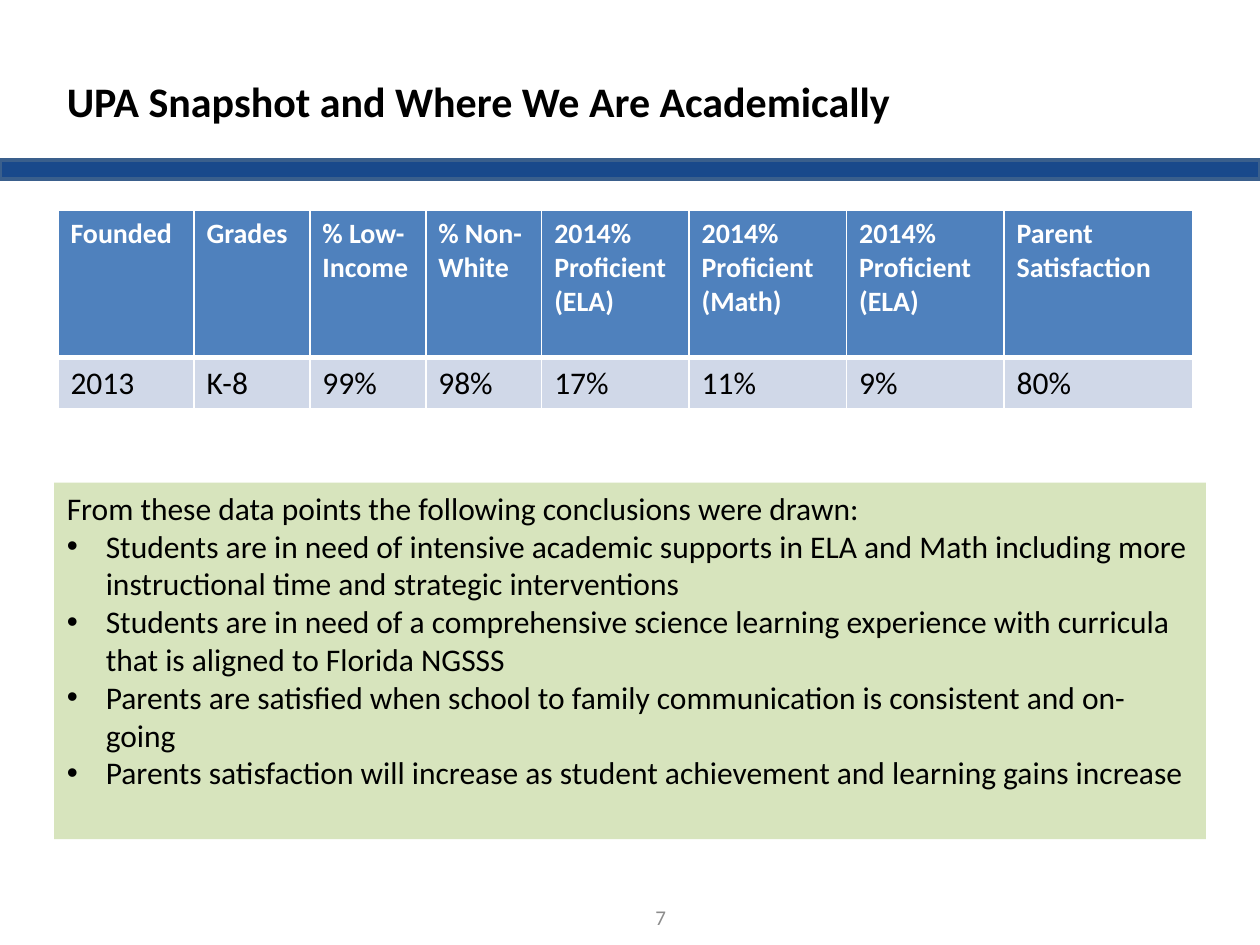
from lxml.etree import SubElement
from pptx import Presentation
from pptx.dml.color import RGBColor
from pptx.enum.shapes import MSO_SHAPE
from pptx.enum.text import MSO_ANCHOR, MSO_AUTO_SIZE, PP_ALIGN
from pptx.oxml.ns import qn
from pptx.util import Inches, Pt

HEADERS = ["Founded", "Grades", "% Low-Income", "% Non-White",
           "2014% Proficient\n(ELA)", "2014% Proficient\n(Math)",
           "2014% Proficient\n(ELA)", "Parent Satisfaction"]
VALUES = ["2013", "K-8", "99%", "98%", "17%", "11%", "9%", "80%"]
COLUMN_WIDTHS = [1.08, 0.92, 0.92, 0.92, 1.17, 1.25, 1.25, 1.5]
INTRODUCTION = "From these data points the following conclusions were drawn:"
CONCLUSIONS = [
    "Students are in need of intensive academic supports in ELA and Math including more "
    "instructional time and strategic interventions",
    "Students are in need of a comprehensive science learning experience with curricula "
    "that is aligned to Florida NGSSS",
    "Parents are satisfied when school to family communication is consistent and on-going",
    "Parents satisfaction will increase as student achievement and learning gains increase",
]
TITLE_FORMAT = {"size": Pt(24), "bold": True, "color": "000000"}
HEADER_FORMAT = {"size": Pt(16), "bold": True, "color": "FFFFFF"}
BODY_FORMAT = {"size": Pt(18), "bold": False, "color": "000000"}
NUMBER_FORMAT = {"size": Pt(12), "bold": False, "color": "8C8C8C"}


def rgb(value):
    """Turn a hex string into a colour."""
    return RGBColor.from_string(value)


def paint(target, color):
    """Give a shape or cell a solid fill."""
    target.fill.solid()
    target.fill.fore_color.rgb = rgb(color)


def format_text(text_frame, text_format, alignment=PP_ALIGN.LEFT):
    """Apply one font format and alignment to every paragraph."""
    for paragraph in text_frame.paragraphs:
        paragraph.alignment = alignment
        paragraph.space_before = Pt(0)
        for run in paragraph.runs:
            run.font.name = "Calibri"
            for name, value in text_format.items():
                if name == "color":
                    run.font.color.rgb = rgb(value)
                else:
                    setattr(run.font, name, value)


def place(shape, box):
    """Move and size a shape to a box in inches."""
    for name, value in zip(("left", "top", "width", "height"), box):
        setattr(shape, name, Inches(value))


def set_bullet(paragraph, character=None, indent=0):
    """Set the hanging indent and bullet of a paragraph."""
    properties = paragraph._p.get_or_add_pPr()
    properties.set("marL", str(Inches(indent)))
    properties.set("indent", str(-Inches(indent)))
    if character:
        SubElement(properties, qn("a:buFont"), typeface="Arial")
        SubElement(properties, qn("a:buChar"), char=character)
    else:
        SubElement(properties, qn("a:buNone"))


def set_borders(cell, widths):
    """Draw white cell borders of the given point widths."""
    properties = cell._tc.get_or_add_tcPr()
    for side, width in widths.items():
        line = SubElement(properties, qn(f"a:ln{side}"), w=str(Pt(width)))
        fill = SubElement(line, qn("a:solidFill"))
        SubElement(fill, qn("a:srgbClr"), val="FFFFFF")


def add_band(slide, box):
    """Add the blue band below the title."""
    band = slide.shapes.add_shape(MSO_SHAPE.RECTANGLE, *map(Inches, box))
    band.shadow.inherit = False
    paint(band, "19498B")
    band.line.color.rgb = rgb("3A5F8C")
    band.line.width = Pt(2)


def add_title(slide, box):
    """Fill and place the title."""
    title = slide.shapes.title
    place(title, box)
    title.text_frame.text = "UPA Snapshot and Where We Are Academically"
    title.text_frame.vertical_anchor = MSO_ANCHOR.BOTTOM
    title.text_frame.auto_size = MSO_AUTO_SIZE.NONE
    format_text(title.text_frame, TITLE_FORMAT)


def add_snapshot_table(slide, box):
    """Add the table of school figures."""
    rows = [(HEADERS, HEADER_FORMAT, "4F81BD", 1.17, {"L": 1, "R": 1, "T": 1, "B": 3}),
            (VALUES, BODY_FORMAT, "D0D8E8", 0.4, {"L": 1, "R": 1, "T": 3, "B": 1})]
    table = slide.shapes.add_table(len(rows), len(HEADERS), *map(Inches, box)).table
    for column, width in zip(table.columns, COLUMN_WIDTHS):
        column.width = Inches(width)
    for row, (texts, text_format, color, height, borders) in zip(table.rows, rows):
        row.height = Inches(height)
        for cell, text in zip(row.cells, texts):
            cell.text = text
            set_borders(cell, borders)
            paint(cell, color)
            format_text(cell.text_frame, text_format)


def add_conclusions(slide, box):
    """Fill and place the list of conclusions."""
    body = slide.placeholders[1]
    place(body, box)
    paint(body, "D7E4BD")
    text_frame = body.text_frame
    text_frame.text = "\n".join([INTRODUCTION, *CONCLUSIONS])
    text_frame.auto_size = MSO_AUTO_SIZE.NONE
    text_frame.vertical_anchor = MSO_ANCHOR.TOP
    format_text(text_frame, BODY_FORMAT)
    introduction, *conclusions = text_frame.paragraphs
    set_bullet(introduction)
    for paragraph in conclusions:
        set_bullet(paragraph, "•", 0.31)


def add_slide_number(slide, box):
    """Add the page number at the foot."""
    text_frame = slide.shapes.add_textbox(*map(Inches, box)).text_frame
    text_frame.word_wrap = True
    text_frame.text = "7"
    text_frame.vertical_anchor = MSO_ANCHOR.MIDDLE
    format_text(text_frame, NUMBER_FORMAT, PP_ALIGN.CENTER)


def main():
    """Build and save the slide."""
    presentation = Presentation()
    presentation.slide_width, presentation.slide_height = Inches(10), Inches(7.5)
    slide = presentation.slides.add_slide(presentation.slide_layouts[1])
    add_band(slide, (0, 1.27, 10, 0.15))
    add_title(slide, (0.43, 0.31, 9.14, 0.74))
    add_snapshot_table(slide, (0.46, 1.67, 9, 1.57))
    add_conclusions(slide, (0.43, 3.83, 9.14, 2.83))
    add_slide_number(slide, (4.08, 7.08, 2.33, 0.4))
    presentation.save("out.pptx")


if __name__ == "__main__":
    main()
